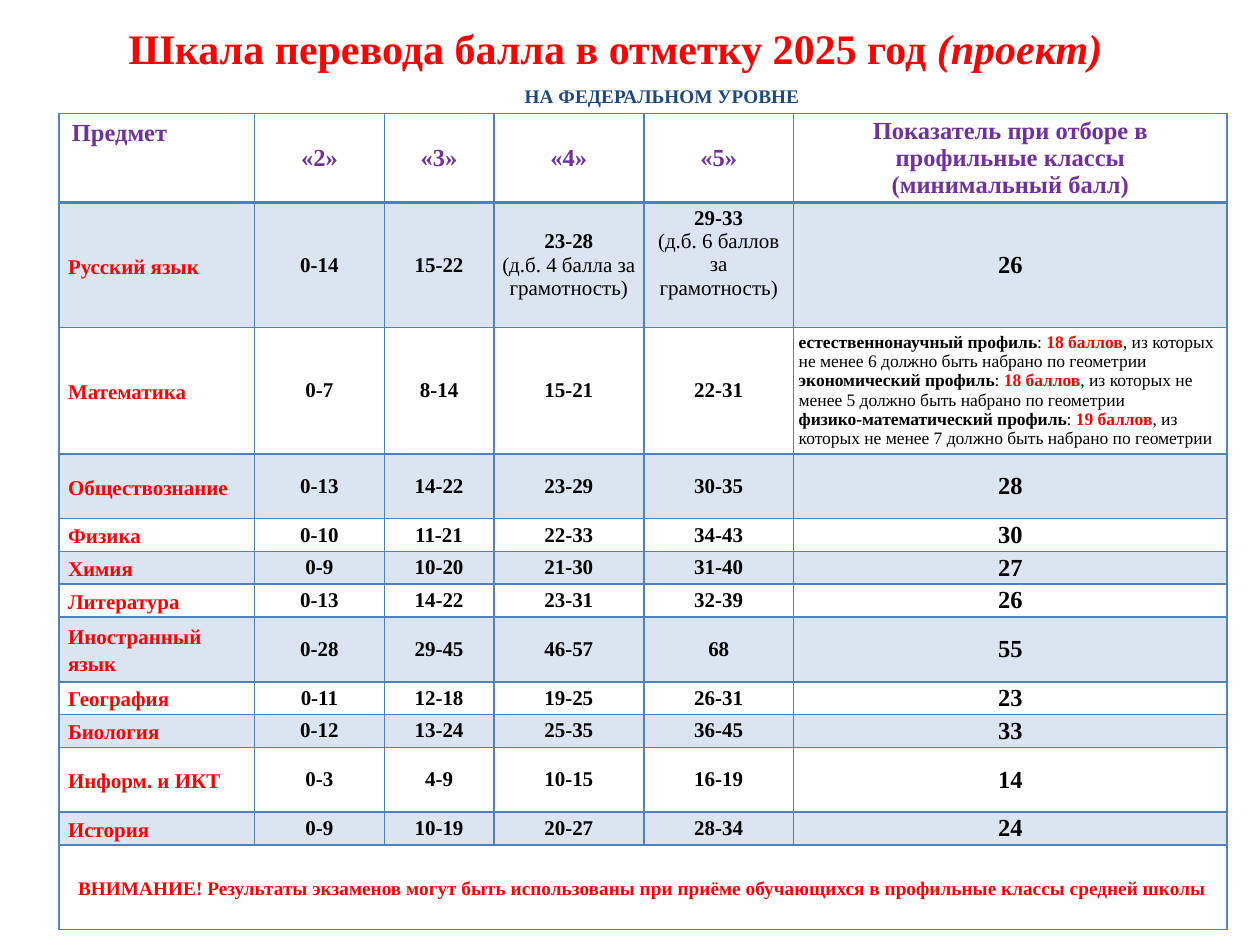
from lxml import etree
from pptx import Presentation
from pptx.dml.color import RGBColor
from pptx.enum.text import MSO_ANCHOR, MSO_AUTO_SIZE, PP_ALIGN
from pptx.oxml.ns import qn
from pptx.util import Inches, Pt

LEFT, CENTER = PP_ALIGN.LEFT, PP_ALIGN.CENTER
TOP, MIDDLE, BOTTOM = MSO_ANCHOR.TOP, MSO_ANCHOR.MIDDLE, MSO_ANCHOR.BOTTOM
NO_FIT, GROW = MSO_AUTO_SIZE.NONE, MSO_AUTO_SIZE.SHAPE_TO_FIT_TEXT

COLORS = {"red": "FF0000", "navy": "1F497D", "purple": "7030A0",
          "black": "000000", "blue": "4F81BD"}
FONT = "Times New Roman"
BAND_OPACITY = 20

# style name: size, colour, bold, italic
STYLES = {
    "title": (24, "red", True, False),
    "title note": (24, "red", True, True),
    "level": (11, "navy", True, False),
    "header": (14, "purple", True, False),
    "subject": (12, "red", True, False),
    "range": (12, "black", True, False),
    "range note": (12, "black", False, False),
    "score": (14, "black", True, False),
    "profile": (10, "black", True, False),
    "profile score": (10, "red", True, False),
    "profile note": (10, "black", False, False),
    "warning": (11, "red", True, False),
}

COLUMN_WIDTHS = [15.5, 10.3, 8.7, 11.9, 11.9, 34.4]
ROW_HEIGHTS = [7.1, 9.9, 10, 5.15, 2.6, 2.6, 2.6, 5.15, 2.6, 2.6, 5.15, 2.6, 6.7]

HEADINGS = ["Предмет", "«2»", "«3»", "«4»", "«5»",
            ["Показатель при отборе в профильные классы", "(минимальный балл)"]]
PROFILES = [("естественнонаучный", 18, 6), ("экономический", 18, 5),
            ("физико-математический", 19, 7)]
SUBJECTS = [
    ("Русский язык", "0-14", "15-22",
     ["23-28", "(д.б. 4 балла за грамотность)"],
     ["29-33", "(д.б. 6 баллов за грамотность)"], "26"),
    ("Математика", "0-7", "8-14", "15-21", "22-31", PROFILES),
    ("Обществознание", "0-13", "14-22", "23-29", "30-35", "28"),
    ("Физика", "0-10", "11-21", "22-33", "34-43", "30"),
    ("Химия", "0-9", "10-20", "21-30", "31-40", "27"),
    ("Литература", "0-13", "14-22", "23-31", "32-39", "26"),
    ("Иностранный язык", "0-28", "29-45", "46-57", "68", "55"),
    ("География", "0-11", "12-18", "19-25", "26-31", "23"),
    ("Биология", "0-12", "13-24", "25-35", "36-45", "33"),
    ("Информ. и ИКТ", "0-3", "4-9", "10-15", "16-19", "14"),
    ("История", "0-9", "10-19", "20-27", "28-34", "24"),
]
WARNING = ("ВНИМАНИЕ! Результаты экзаменов могут быть использованы при приёме "
           "обучающихся в профильные классы средней школы")


def as_list(content):
    return content if isinstance(content, list) else [content]


def profile_lines():
    return [[(f"{profile} профиль", "profile"), (": ", "profile note"),
             (f"{score} баллов", "profile score"),
             (f", из которых не менее {geometry} должно быть набрано по геометрии",
              "profile note")]
            for profile, score, geometry in PROFILES]


class Deck:
    """Slide on a grid of 100 columns by 75 rows."""

    def __init__(self):
        self.presentation = Presentation()
        self.presentation.slide_width = Inches(10)
        self.presentation.slide_height = Inches(7.5)
        self.column = self.presentation.slide_width / 100
        self.row = self.presentation.slide_height / 75
        layout = self.presentation.slide_layouts[5]
        self.slide = self.presentation.slides.add_slide(layout)

    def area(self, left, top, width, height):
        return (round(left * self.column), round(top * self.row),
                round(width * self.column), round(height * self.row))

    def fill_text(self, frame, lines, align=CENTER, spacing=1.0):
        """Fill a text frame; each line is a list of (text, style) runs."""
        for index, line in enumerate(lines):
            paragraph = frame.add_paragraph() if index else frame.paragraphs[0]
            paragraph.alignment, paragraph.line_spacing = align, spacing
            for text, style in line:
                size, color, bold, italic = STYLES[style]
                run = paragraph.add_run()
                run.text = text
                run.font.color.rgb = RGBColor.from_string(COLORS[color])
                formats = {"name": FONT, "size": Pt(size), "bold": bold, "italic": italic}
                for name, value in formats.items():
                    setattr(run.font, name, value)

    def title(self, area, runs):
        title = self.slide.shapes.title
        title.left, title.top, title.width, title.height = self.area(*area)
        frame = title.text_frame
        frame.auto_size, frame.vertical_anchor = NO_FIT, BOTTOM
        self.fill_text(frame, [runs])

    def label(self, area, runs):
        frame = self.slide.shapes.add_textbox(*self.area(*area)).text_frame
        frame.word_wrap, frame.auto_size = True, GROW
        self.fill_text(frame, [runs])

    def table(self, left, top, widths, heights):
        area = self.area(left, top, sum(widths), sum(heights))
        table = self.slide.shapes.add_table(len(heights), len(widths), *area).table
        table.first_row = table.horz_banding = False
        for column, width in zip(table.columns, widths):
            column.width = round(width * self.column)
        for row, height in zip(table.rows, heights):
            row.height = round(height * self.row)
        for index in range(len(heights)):
            for cell in table.rows[index].cells:
                self.borders(cell, top=2 if index == 1 else 1,
                             bottom=1 if index else 2)
                self.band(cell, index % 2 == 1)
        return table

    def borders(self, cell, top, bottom):
        properties = cell._tc.get_or_add_tcPr()
        for side, width in {"lnL": 1, "lnR": 1, "lnT": top, "lnB": bottom}.items():
            line = etree.SubElement(properties, qn(f"a:{side}"), w=str(Pt(width)))
            fill = etree.SubElement(line, qn("a:solidFill"))
            etree.SubElement(fill, qn("a:srgbClr"), val=COLORS["blue"])

    def band(self, cell, shaded):
        if not shaded:
            cell.fill.background()
            return
        cell.fill.solid()
        cell.fill.fore_color.rgb = RGBColor.from_string(COLORS["blue"])
        color = cell._tc.tcPr.find(qn("a:solidFill")).find(qn("a:srgbClr"))
        etree.SubElement(color, qn("a:alpha"), val=str(BAND_OPACITY * 1000))

    def cell(self, cell, lines, align=CENTER, spacing=1.0, anchor=MIDDLE,
             side=0.4, top=0, bottom=0):
        cell.vertical_anchor = anchor
        margins = {"margin_left": side * self.column, "margin_right": side * self.column,
                   "margin_top": top * self.row, "margin_bottom": bottom * self.row}
        for name, value in margins.items():
            setattr(cell, name, round(value))
        self.fill_text(cell.text_frame, lines, align, spacing)


def main():
    deck = Deck()
    deck.title((4.7, 1.6, 88.3, 4.7),
               [("Шкала перевода балла в отметку 2025 год ", "title"),
                ("(проект)", "title note")])
    deck.label((31.2, 6.2, 42.7, 2.9), [("НА ФЕДЕРАЛЬНОМ УРОВНЕ", "level")])
    scale = deck.table(4.7, 9, COLUMN_WIDTHS, ROW_HEIGHTS)

    corner = {"align": LEFT, "anchor": TOP, "side": 1, "top": 0.5, "bottom": 0.5}
    for column, heading in enumerate(HEADINGS):
        lines = [[(text, "header")] for text in as_list(heading)]
        deck.cell(scale.cell(0, column), lines, **({} if column else corner))

    for row, (subject, *ranges, score) in enumerate(SUBJECTS, 1):
        deck.cell(scale.cell(row, 0), [[(subject, "subject")]], LEFT, 1.15, side=0.7)
        for column, marks in enumerate(ranges, 1):
            lines = [[(text, "range note" if index else "range")]
                     for index, text in enumerate(as_list(marks))]
            raised = row == 1 and column == 4
            deck.cell(scale.cell(row, column), lines, bottom=1.9 if raised else 0)
        if score is PROFILES:
            deck.cell(scale.cell(row, 5), profile_lines(), LEFT)
        else:
            deck.cell(scale.cell(row, 5), [[(score, "score")]])

    last = len(ROW_HEIGHTS) - 1
    scale.cell(last, 0).merge(scale.cell(last, 5))
    deck.cell(scale.cell(last, 0), [[(WARNING, "warning")]], LEFT, 1.15, side=1.5)
    deck.presentation.save("out.pptx")


if __name__ == "__main__":
    main()
